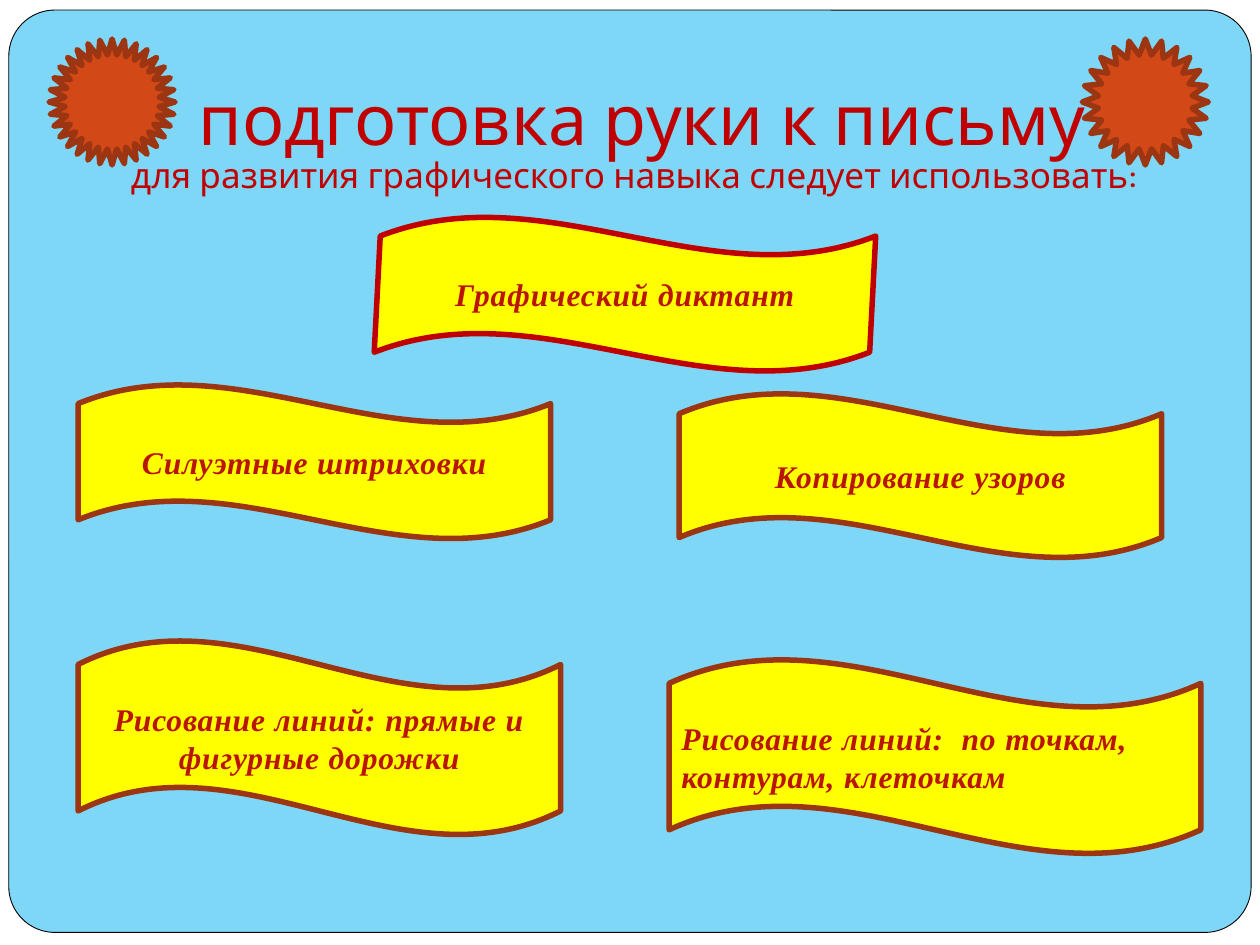
from pptx import Presentation
from pptx.dml.color import RGBColor
from pptx.enum.shapes import MSO_SHAPE
from pptx.enum.text import MSO_ANCHOR, PP_ALIGN
from pptx.util import Inches, Pt

WAVE, PANEL = MSO_SHAPE.WAVE, MSO_SHAPE.ROUNDED_RECTANGLE
STAR_24, STAR_32 = MSO_SHAPE.STAR_24_POINT, MSO_SHAPE.STAR_32_POINT
LEFT, CENTER = PP_ALIGN.LEFT, PP_ALIGN.CENTER
MIDDLE, BOTTOM = MSO_ANCHOR.MIDDLE, MSO_ANCHOR.BOTTOM

SKY, YELLOW, ORANGE = "7FD7F7", "FFFF00", "D34817"
RED, BROWN, BANNER_TEXT = "C00000", "9C3511", "BA1500"

# text, (left, top, width, height), outline, alignment
BANNERS = [
    ("Графический диктант", (2.97, 1.72, 3.98, 1.23), RED, CENTER),
    ("Рисование линий:  по точкам, контурам, клеточкам",
     (5.31, 5.23, 4.22, 1.55), BROWN, LEFT),
    ("Рисование линий: прямые и фигурные дорожки",
     (0.62, 5.08, 3.83, 1.55), BROWN, CENTER),
    ("Копирование узоров", (5.39, 3.12, 3.83, 1.31), BROWN, CENTER),
    ("Силуэтные штриховки", (0.62, 3.05, 3.75, 1.23), BROWN, CENTER),
]


def rgb(value):
    return RGBColor.from_string(value)


def add_shape(slide, kind, box, fill, line, width=3.15):
    sp = slide.shapes.add_shape(kind, *map(Inches, box))
    sp.shadow.inherit = False
    sp.fill.solid()
    sp.fill.fore_color.rgb = rgb(fill)
    sp.line.color.rgb = rgb(line)
    sp.line.width = Pt(width)
    return sp


def add_run(p, text, size, font, color):
    r = p.add_run()
    r.text = text
    r.font.size = Pt(size)
    r.font.name = font
    r.font.color.rgb = rgb(color)
    return r


def add_banner(slide, text, box, line, align):
    sp = add_shape(slide, WAVE, box, YELLOW, line)
    tf = sp.text_frame
    tf.word_wrap = True
    tf.vertical_anchor = MIDDLE
    p = tf.paragraphs[0]
    p.alignment = align
    r = add_run(p, text, 18, "Times New Roman", BANNER_TEXT)
    r.font.bold = r.font.italic = True
    r.font._element.set("spc", "50")
    return sp


def add_title(slide):
    sp = slide.shapes.add_textbox(*map(Inches, (0.78, 0.31, 8.5, 1.64)))
    tf = sp.text_frame
    tf.word_wrap = True
    tf.vertical_anchor = BOTTOM
    tf.margin_bottom = Inches(0.4)
    p = tf.paragraphs[0]
    p.alignment = CENTER
    p.line_spacing = 0.85
    add_run(p, " подготовка руки к письму", 40, "Karla", RED)
    p.add_line_break()
    add_run(p, "для развития графического навыка следует использовать:",
            20, "Karla", RED)


def main():
    prs = Presentation()
    prs.slide_width, prs.slide_height = Inches(10), Inches(7.5)
    slide = prs.slides.add_slide(prs.slide_layouts[6])

    panel = add_shape(slide, PANEL, (0.07, 0.08, 9.86, 7.32), SKY, "000000", 0.5)
    panel.adjustments[0] = 0.05
    add_title(slide)
    banners = [add_banner(slide, *banner) for banner in BANNERS]
    banners[0].adjustments[1] = -0.006  # the top banner leans slightly
    for kind, left in ((STAR_24, 8.59), (STAR_32, 0.39)):
        add_shape(slide, kind, (left, 0.31, 1, 1), ORANGE, BROWN)

    prs.save("out.pptx")


if __name__ == "__main__":
    main()
